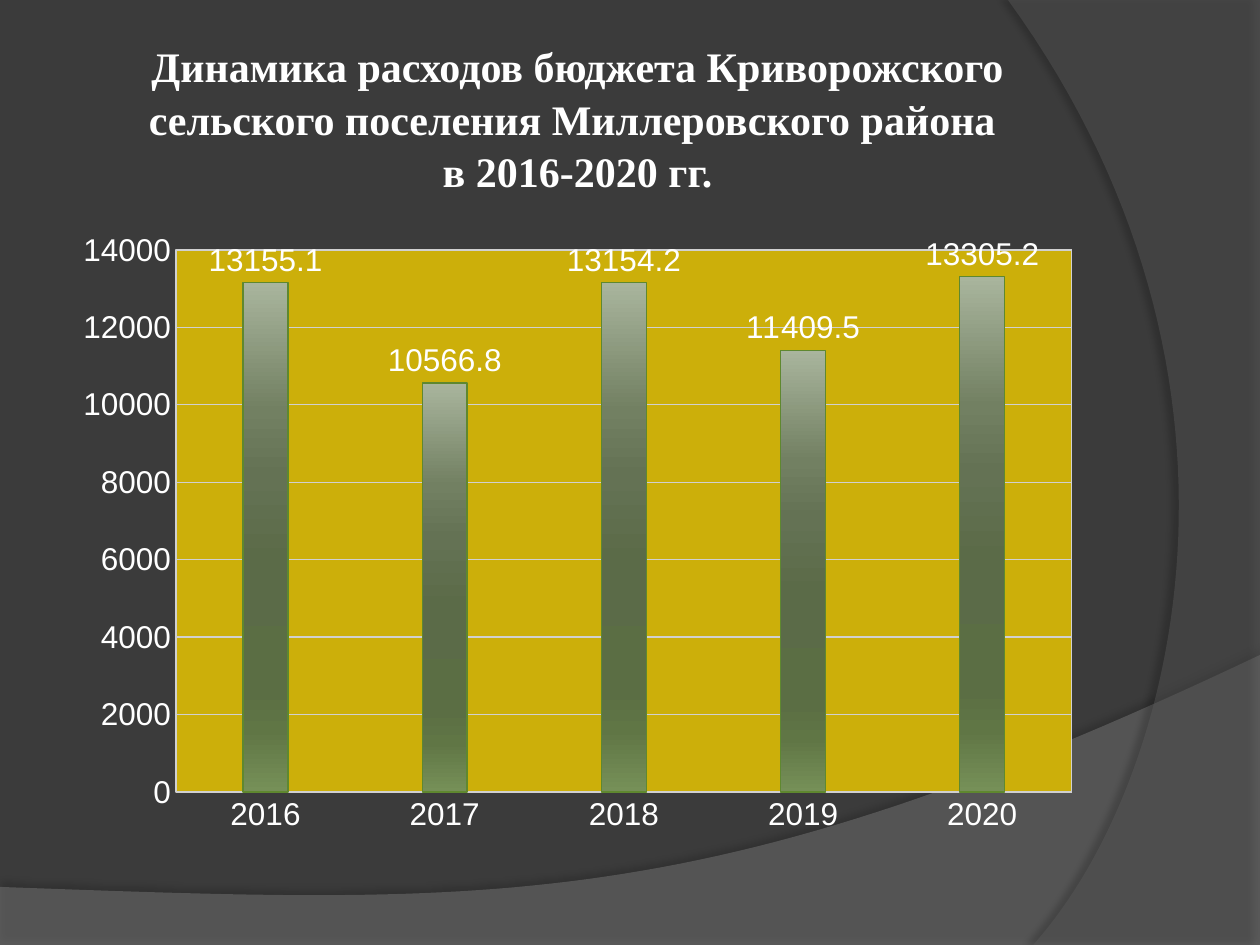
from dataclasses import dataclass

from lxml.etree import SubElement
from pptx import Presentation
from pptx.chart.data import CategoryChartData
from pptx.dml.color import RGBColor
from pptx.enum.chart import XL_CHART_TYPE, XL_LABEL_POSITION, XL_TICK_MARK
from pptx.enum.text import MSO_ANCHOR, PP_ALIGN
from pptx.oxml import parse_xml
from pptx.oxml.ns import nsdecls, qn
from pptx.util import Emu, Pt

SCALE = 914400 / 126


@dataclass(frozen=True)
class Theme:
    """Colours, fonts and type sizes of the slide."""
    bg: str = "3B3B3B"
    wave: str = "7F7F7F"
    arc: str = "5E5E5E"
    text: str = "FFFFFF"
    plot: str = "CCAF0A"
    grid: str = "D0D0D0"
    bar_line: str = "5F882F"
    bar_stops: tuple = ((0, "A9B59D"), (25, "728062"), (38, "647254"), (55, "5B6B48"),
                        (80, "5B6E44"), (88, "607645"), (100, "769058"))
    title_font: str = "Times New Roman"
    chart_font: str = "Arial"
    title_size: int = 24
    chart_size: int = 18


THEME = Theme()


def px(n):
    """Turn px into EMU."""
    return Emu(round(n * SCALE))


def rgb(value):
    """Turn a hex string into a colour."""
    return RGBColor.from_string(value)


def bezier(p0, p1, p2, p3, steps=60):
    """Return points along a cubic curve, without its start."""
    ts = [i / steps for i in range(1, steps + 1)]
    return [tuple((1 - t) ** 3 * a + 3 * (1 - t) ** 2 * t * b + 3 * (1 - t) * t * t * c + t ** 3 * d
                  for a, b, c, d in zip(p0, p1, p2, p3)) for t in ts]


def add_band(slide, box, corners, curve, color, alpha, shadow):
    """Draw a translucent band with one curved edge and a soft shadow."""
    x, y, w, h = box
    pts = [(x + a * w, y + b * h) for a, b in corners]
    handles = [(x + a * w, y + b * h) for a, b in curve]
    pts += bezier(pts[-1], *handles)
    emu = [(px(a), px(b)) for a, b in pts]
    fb = slide.shapes.build_freeform(*emu[0], scale=1.0)
    fb.add_line_segments(emu[1:], close=True)
    sp = fb.convert_to_shape()
    sp.shadow.inherit = False
    sp.fill.solid()
    sp.fill.fore_color.rgb = rgb(color)
    sp.line.fill.background()
    spPr = sp._element.spPr
    clr = spPr.find(qn("a:solidFill")).find(qn("a:srgbClr"))
    SubElement(clr, qn("a:alpha"), val=str(alpha * 1000))
    opacity, dist, angle = shadow
    spPr.find(qn("a:effectLst")).append(parse_xml(
        f'<a:outerShdw {nsdecls("a")} blurRad="{Pt(4)}" dist="{Pt(dist)}" dir="{angle * 60000}" '
        f'algn="ctr" rotWithShape="0"><a:srgbClr val="000000"><a:alpha val="{opacity * 1000}"/>'
        '</a:srgbClr></a:outerShdw>'))


def add_title(slide, box, lines):
    """Place the centred title, one line break between its lines."""
    tf = slide.shapes.add_textbox(*map(px, box)).text_frame
    tf.word_wrap = True
    tf.vertical_anchor = MSO_ANCHOR.MIDDLE
    tf.margin_left = tf.margin_right = tf.margin_top = tf.margin_bottom = px(6)
    p = tf.paragraphs[0]
    p.alignment = PP_ALIGN.CENTER
    p.line_spacing = 1.05
    p.font.name, p.font.size, p.font.bold = THEME.title_font, Pt(THEME.title_size), True
    p.font.color.rgb = rgb(THEME.text)
    for i, line in enumerate(lines):
        if i:
            p.add_line_break()
        p.add_run().text = line


def style_plot(chart, box, inner):
    """Fix the inner plot area inside the chart box and fill it."""
    area = chart._chartSpace.chart.plotArea
    for old in area.findall(qn("c:layout")):
        area.remove(old)
    x, y, w, h = box
    parts = {"x": (inner[0] - x) / w, "y": (inner[1] - y) / h, "w": inner[2] / w, "h": inner[3] / h}
    values = "".join(f'<c:{k} val="{v:.4f}"/>' for k, v in parts.items())
    area.insert(0, parse_xml(
        f'<c:layout {nsdecls("c")}><c:manualLayout><c:layoutTarget val="inner"/>'
        f'<c:xMode val="edge"/><c:yMode val="edge"/>{values}</c:manualLayout></c:layout>'))
    area.append(parse_xml(
        f'<c:spPr {nsdecls("c", "a")}><a:solidFill><a:srgbClr val="{THEME.plot}"/></a:solidFill>'
        f'<a:ln w="{Pt(0.75)}"><a:solidFill><a:srgbClr val="{THEME.grid}"/></a:solidFill></a:ln></c:spPr>'))


def style_bars(series):
    """Give the bars their vertical gradient and outline."""
    fmt = series.format
    fmt.fill.solid()
    fmt.line.color.rgb = rgb(THEME.bar_line)
    fmt.line.width = Pt(0.75)
    spPr = series._element.find(qn("c:spPr"))
    stops = "".join(f'<a:gs pos="{pos * 1000}"><a:srgbClr val="{c}"/></a:gs>' for pos, c in THEME.bar_stops)
    spPr.replace(spPr.find(qn("a:solidFill")), parse_xml(
        f'<a:gradFill {nsdecls("a")}><a:gsLst>{stops}</a:gsLst><a:lin ang="5400000" scaled="0"/></a:gradFill>'))


def add_spending_chart(slide, box, inner, spending):
    """Place the column chart of yearly spending."""
    data = CategoryChartData(number_format="General")
    data.categories = list(spending)
    data.add_series("Series 1", spending.values())
    chart = slide.shapes.add_chart(XL_CHART_TYPE.COLUMN_CLUSTERED, *map(px, box), data).chart
    chart.has_legend = chart.has_title = False
    chart.font.name, chart.font.size = THEME.chart_font, Pt(THEME.chart_size)
    chart.font.color.rgb = rgb(THEME.text)
    for axis in (chart.category_axis, chart.value_axis):
        axis.major_tick_mark = axis.minor_tick_mark = XL_TICK_MARK.NONE
        axis.format.line.color.rgb = rgb(THEME.grid)
    axis = chart.value_axis
    axis.minimum_scale, axis.maximum_scale, axis.major_unit = 0, 14000, 2000
    axis.has_major_gridlines = True
    axis.major_gridlines.format.line.color.rgb = rgb(THEME.grid)
    axis.major_gridlines.format.line.width = Pt(0.75)
    plot = chart.plots[0]
    plot.gap_width, plot.vary_by_categories, plot.has_data_labels = 300, False, True
    labels = plot.data_labels
    labels.show_value, labels.position = True, XL_LABEL_POSITION.OUTSIDE_END
    labels.font.size, labels.font.name = Pt(THEME.chart_size), THEME.chart_font
    labels.font.color.rgb = rgb(THEME.text)
    style_bars(plot.series[0])
    style_plot(chart, box, inner)


def main():
    """Build the slide and save it."""
    prs = Presentation()
    prs.slide_width, prs.slide_height = px(1260), px(945)
    slide = prs.slides.add_slide(prs.slide_layouts[6])
    slide.background.fill.solid()
    slide.background.fill.fore_color.rgb = rgb(THEME.bg)
    add_band(slide, (0, 655, 1260, 290), [(0, 0.8), (0, 1), (1, 1), (1, 0)],
             [(0.56, 0.91), (0.39, 0.86), (0, 0.8)], THEME.wave, 45, (35, 3.5, 270))
    add_band(slide, (1008, 0, 252, 945), [(1, 0), (1, 1), (0.1, 1)],
             [(0.67, 0.83), (1.09, 0.4), (0, 0)], THEME.arc, 40, (45, 4, 180))
    add_title(slide, (63, 38, 1029, 158),
              ["Динамика расходов бюджета Криворожского сельского поселения Миллеровского района ",
               "в 2016-2020 гг."])
    add_spending_chart(slide, (63, 220, 1029, 624), (176, 250, 896, 542),
                       {"2016": 13155.1, "2017": 10566.8, "2018": 13154.2, "2019": 11409.5, "2020": 13305.2})
    prs.save("out.pptx")


if __name__ == "__main__":
    main()
